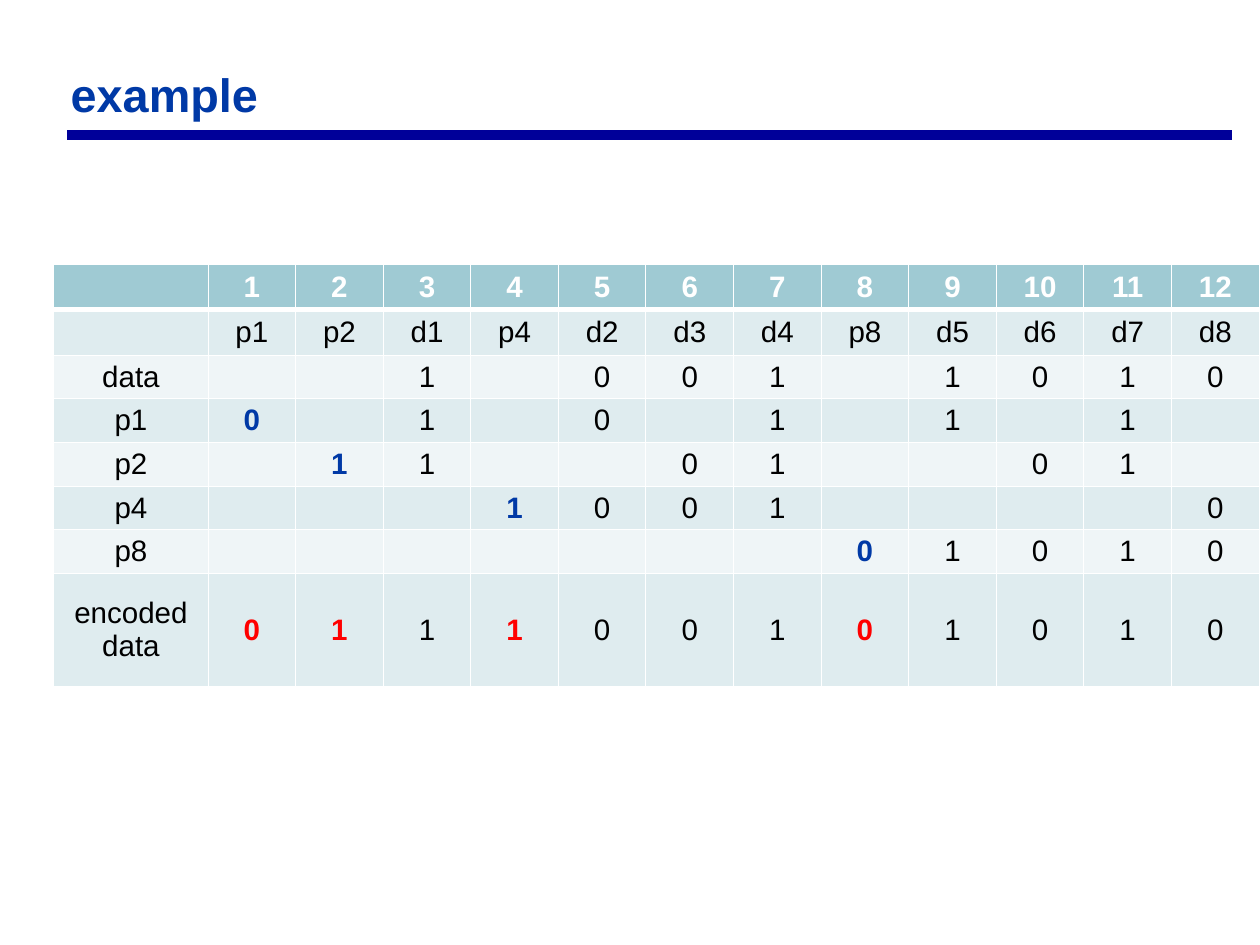
from dataclasses import dataclass
from typing import Any

from lxml import etree
from pptx import Presentation
from pptx.dml.color import RGBColor
from pptx.enum import shapes, text
from pptx.oxml import ns
from pptx.util import Pt


@dataclass(frozen=True)
class Theme:
    font: str = "Arial"
    title: str = "0039A6"
    rule: str = "000099"
    white: str = "FFFFFF"
    black: str = "000000"
    head: str = "9FCAD3"
    dark: str = "DFECEF"
    light: str = "EFF5F7"
    code: str = "FF0000"
    big: float = 38
    body: float = 24


@dataclass(frozen=True)
class Row:
    high: float
    label: str
    vals: str  # one word per column, "-" for an empty cell


T = Theme()
ROWS = [
    Row(37, "", "1 2 3 4 5 6 7 8 9 10 11 12"),
    Row(37, "", "p1 p2 d1 p4 d2 d3 d4 p8 d5 d6 d7 d8"),
    Row(35.5, "data", "- - 1 - 0 0 1 - 1 0 1 0"),
    Row(35.5, "p1", "0 - 1 - 0 - 1 - 1 - 1 -"),
    Row(35.5, "p2", "- 1 1 - - 0 1 - - 0 1 -"),
    Row(35.5, "p4", "- - - 1 0 0 1 - - - - 0"),
    Row(35.5, "p8", "- - - - - - - 0 1 0 1 0"),
    Row(92.2, "encoded data", "0 1 1 1 0 0 1 0 1 0 1 0"),
]
BITS = ROWS[1].vals.split()


def rgb(code: str) -> RGBColor:
    return RGBColor.from_string(code)


def apply(item: Any, vals: dict[str, Any]) -> None:
    for key, val in vals.items():
        setattr(item, key, val)


def inset(item: Any, size: float) -> None:
    sides = ("left", "top", "right", "bottom")
    apply(item, {f"margin_{side}": Pt(size) for side in sides})


def style(para: Any, size: float, color: str, bold: bool) -> None:
    apply(para.font, {"name": T.font, "size": Pt(size), "bold": bold})
    para.font.color.rgb = rgb(color)


def edge(cell: Any, side: str, width: float) -> None:
    props = cell._tc.get_or_add_tcPr()
    line = etree.SubElement(props, ns.qn(f"a:ln{side}"), w=str(Pt(width)))
    fill = etree.SubElement(line, ns.qn("a:solidFill"))
    etree.SubElement(fill, ns.qn("a:srgbClr"), val=T.white)


def look(row: int, col: int) -> tuple[str, bool]:
    """Colour and weight of a cell: parity bits stand out."""
    if row == 0:
        return T.white, True
    bit = BITS[col - 1] if col else ""
    if bit and bit == ROWS[row].label:
        return T.title, True
    if row == len(ROWS) - 1 and bit.startswith("p"):
        return T.code, True
    return T.black, False


def put(cell: Any, row: int, col: int, words: str) -> None:
    for side in "LRTB":
        heavy = (row, side) in ((0, "B"), (1, "T"))
        edge(cell, side, 4 if heavy else 1)
    cell.fill.solid()
    band = T.dark if row % 2 else T.light
    cell.fill.fore_color.rgb = rgb(band if row else T.head)
    inset(cell, 3.6)
    cell.vertical_anchor = text.MSO_ANCHOR.MIDDLE
    para = cell.text_frame.paragraphs[0]
    para.alignment = text.PP_ALIGN.CENTER
    if words:
        para.text = words
        style(para, T.body, *look(row, col))


def grid(slide: Any) -> None:
    count = len(BITS) + 1
    high = sum(row.high for row in ROWS)
    frame = slide.shapes.add_table(
        len(ROWS), count, Pt(43.7), Pt(214.6), Pt(979.8), Pt(high))
    table = frame.table
    for col in range(count):
        table.columns[col].width = Pt(71.2 if col else 125.4)
    for i, row in enumerate(ROWS):
        table.rows[i].height = Pt(row.high)
        for j, word in enumerate([row.label] + row.vals.split()):
            put(table.cell(i, j), i, j, "" if word == "-" else word)


def rule(slide: Any) -> None:
    line = slide.shapes.add_connector(
        shapes.MSO_CONNECTOR.STRAIGHT, Pt(54.5), Pt(110), Pt(1001.5), Pt(110))
    line.line.color.rgb = rgb(T.rule)
    line.line.width = Pt(8)
    etree.SubElement(line._element.spPr, ns.qn("a:effectLst"))


def head(slide: Any) -> None:
    title = slide.shapes.title
    apply(title, {"left": Pt(52.5), "top": Pt(45.4),
                  "width": Pt(925), "height": Pt(58.3)})
    frame = title.text_frame
    frame.text = "example"
    inset(frame, 5)
    apply(frame, {"word_wrap": True, "auto_size": text.MSO_AUTO_SIZE.NONE,
                  "vertical_anchor": text.MSO_ANCHOR.BOTTOM})
    para = frame.paragraphs[0]
    para.alignment = text.PP_ALIGN.LEFT
    style(para, T.big, T.title, True)


def main() -> None:
    deck = Presentation()
    apply(deck, {"slide_width": Pt(1024), "slide_height": Pt(768)})
    slide = deck.slides.add_slide(deck.slide_layouts[5])
    # Title with its rule
    rule(slide)
    head(slide)
    # Parity table
    grid(slide)
    deck.save("out.pptx")


if __name__ == "__main__":
    main()
